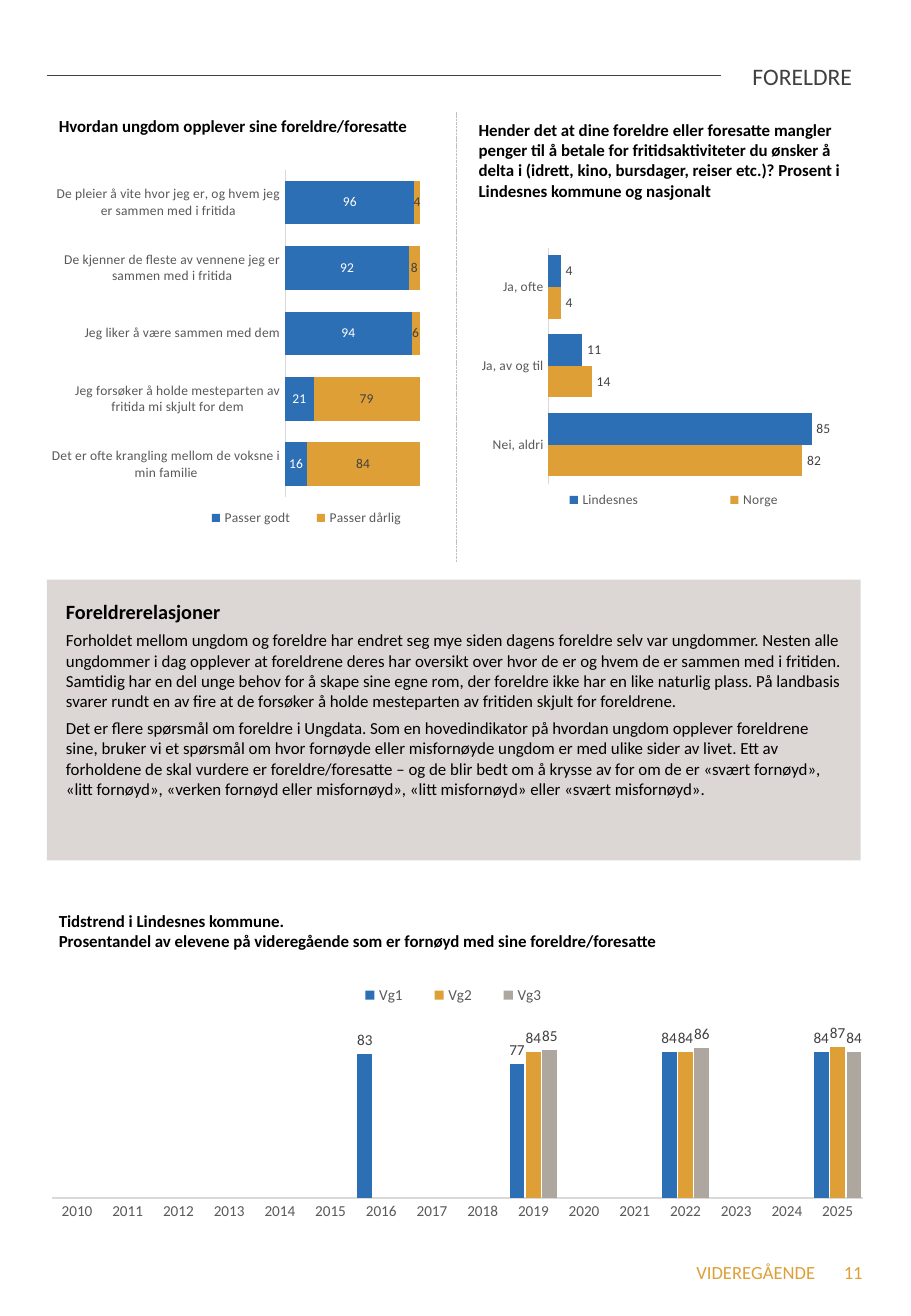
from lxml.etree import SubElement
from pptx import Presentation
from pptx.chart.data import CategoryChartData
from pptx.dml.color import RGBColor
from pptx.enum.chart import XL_CHART_TYPE as KIND, XL_LABEL_POSITION as SPOT
from pptx.enum.chart import XL_LEGEND_POSITION as SIDE, XL_TICK_LABEL_POSITION as TICKS
from pptx.enum.chart import XL_TICK_MARK as MARK
from pptx.enum.dml import MSO_LINE
from pptx.enum.shapes import MSO_CONNECTOR, MSO_SHAPE
from pptx.enum.text import MSO_ANCHOR, PP_ALIGN
from pptx.oxml import parse_xml
from pptx.oxml.ns import nsdecls, qn
from pptx.util import Cm, Pt

FONT = "Calibri"
HUES = {"black": "000000", "dark": "404040", "grey": "595959", "rule": "D9D9D9",
        "dash": "BFBFBF", "white": "FFFFFF", "blue": "2C6FB4", "gold": "DE9F37",
        "stone": "ADA7A0", "panel": "A89D94"}


def hue(name):
    return RGBColor.from_string(HUES[name])


def style(font, size, color, bold=False):
    font.name, font.size, font.bold = FONT, Pt(size), bold
    font.color.rgb = hue(color)


def add_para(frame, text, size, color="black", bold=False, first=False):
    para = frame.paragraphs[0] if first else frame.add_paragraph()
    run = para.add_run()
    run.text = text
    style(run.font, size, color, bold)
    return para


def add_text(slide, place, lines, size, color="black", bold=False):
    frame = slide.shapes.add_textbox(*map(Cm, place)).text_frame
    frame.word_wrap = True
    return [add_para(frame, line, size, color, bold, i == 0)
            for i, line in enumerate(lines)]


def add_line(slide, ends, color, width, dash=None):
    line = slide.shapes.add_connector(MSO_CONNECTOR.STRAIGHT, *map(Cm, ends))
    line.line.color.rgb = hue(color)
    line.line.width = Pt(width)
    if dash:
        line.line.dash_style = dash
    SubElement(line._element.spPr, qn("a:effectLst"))


def add_panel(slide, place, title, paras):
    panel = slide.shapes.add_shape(MSO_SHAPE.RECTANGLE, *map(Cm, place))
    panel.shadow.inherit = False
    panel.fill.solid()
    panel.fill.fore_color.rgb = hue("panel")
    tint = panel._element.spPr.find(".//" + qn("a:srgbClr"))
    SubElement(tint, qn("a:alpha")).set("val", "40000")
    panel.line.fill.background()
    frame = panel.text_frame
    frame.word_wrap = True
    frame.vertical_anchor = MSO_ANCHOR.TOP
    frame.margin_left = frame.margin_right = Cm(0.4)
    frame.margin_top = frame.margin_bottom = Cm(0.4)
    add_para(frame, title, 12, bold=True, first=True)
    for text in paras:
        add_para(frame, text, 10)
    for para in frame.paragraphs:
        para.alignment = PP_ALIGN.LEFT
        para.space_after = Pt(4)


def set_layout(parent, index, box, inner=False):
    """Place a chart part by shares of the chart area."""
    for old in parent.findall(qn("c:layout")):
        parent.remove(old)
    layout = parse_xml(f"<c:layout {nsdecls('c')}><c:manualLayout/></c:layout>")
    pairs = [("layoutTarget", "inner")] if inner else []
    pairs += [("xMode", "edge"), ("yMode", "edge"), *zip("xywh", box)]
    for tag, val in pairs:
        SubElement(layout[0], qn("c:" + tag)).set("val", str(val))
    parent.insert(index, layout)


def add_chart(slide, kind, place, cats, rows, gap, lap, plot_box, key_box,
              size=8, side=SIDE.BOTTOM, flip=False, span=(0, 100)):
    data = CategoryChartData(number_format="0")
    data.categories = cats
    for name, vals, *_ in rows:
        data.add_series(name, vals)
    chart = slide.shapes.add_chart(kind, *map(Cm, place), data).chart
    style(chart.font, size, "black")
    chart.has_title = False

    # Axes
    axis = chart.category_axis
    axis.major_tick_mark = axis.minor_tick_mark = MARK.NONE
    axis.tick_label_position = TICKS.NEXT_TO_AXIS
    axis.has_major_gridlines = False
    axis.reverse_order = flip
    axis.format.line.color.rgb = hue("rule")
    axis.format.line.width = Pt(0.75)
    style(axis.tick_labels.font, size, "grey")
    scale = chart.value_axis
    scale.minimum_scale, scale.maximum_scale = span
    scale.has_major_gridlines = False
    scale.visible = False

    # Bars and labels
    plot = chart.plots[0]
    plot.gap_width, plot.overlap = gap, lap
    plot.vary_by_categories = False
    for bars, (_, _, color, ink) in zip(plot.series, rows):
        bars.format.fill.solid()
        bars.format.fill.fore_color.rgb = hue(color)
        bars.invert_if_negative = False
        tags = bars.data_labels
        tags.show_value = True
        tags.number_format, tags.number_format_is_linked = "0", False
        tags.position = SPOT.CENTER if lap == 100 else SPOT.OUTSIDE_END
        style(tags.font, size, ink)

    # Legend and layout
    chart.has_legend = True
    chart.legend.position = side
    chart.legend.include_in_layout = False
    style(chart.legend.font, size, "grey")
    set_layout(chart.legend._element, 1, key_box)
    set_layout(chart._chartSpace.chart.plotArea, 0, plot_box, True)


def main():
    deck = Presentation()
    deck.slide_width, deck.slide_height = Cm(19.05), Cm(27.51)
    slide = deck.slides.add_slide(deck.slide_layouts[6])

    # Text panel
    add_panel(slide, (0.98, 12.12, 17.02, 5.87), "Foreldrerelasjoner", [
        "Forholdet mellom ungdom og foreldre har endret seg mye siden dagens foreldre selv var "
        "ungdommer. Nesten alle ungdommer i dag opplever at foreldrene deres har oversikt over "
        "hvor de er og hvem de er sammen med i fritiden. Samtidig har en del unge behov for å "
        "skape sine egne rom, der foreldre ikke har en like naturlig plass. På landbasis svarer "
        "rundt en av fire at de forsøker å holde mesteparten av fritiden skjult for foreldrene.",
        "Det er flere spørsmål om foreldre i Ungdata. Som en hovedindikator på hvordan ungdom "
        "opplever foreldrene sine, bruker vi et spørsmål om hvor fornøyde eller misfornøyde "
        "ungdom er med ulike sider av livet. Ett av forholdene de skal vurdere er "
        "foreldre/foresatte – og de blir bedt om å krysse av for om de er «svært fornøyd», «litt "
        "fornøyd», «verken fornøyd eller misfornøyd», «litt misfornøyd» eller «svært misfornøyd»."])

    # Header and chart titles
    head, = add_text(slide, (0.98, 1.16, 17.09, 0.86), ["FORELDRE"], 14, "dark")
    head.alignment = PP_ALIGN.RIGHT
    add_line(slide, (0.98, 1.57, 15.07, 1.57), "dark", 0.3)
    add_text(slide, (0.98, 18.91, 17.02, 1.12), [
        "Tidstrend i Lindesnes kommune.",
        "Prosentandel av elevene på videregående som er fornøyd med sine foreldre/foresatte"],
        10, bold=True)
    add_text(slide, (9.76, 2.37, 8.36, 2.39), [
        "Hender det at dine foreldre eller foresatte mangler penger til å betale for "
        "fritidsaktiviteter du ønsker å delta i (idrett, kino, bursdager, reiser etc.)? "
        "Prosent i Lindesnes kommune og nasjonalt"], 10, bold=True)
    add_text(slide, (0.98, 2.29, 8, 1.12),
             ["Hvordan ungdom opplever sine foreldre/foresatte"], 10, bold=True)

    # Footer with right tabs
    foot, = add_text(slide, (0.85, 26.24, 18.2, 0.74), ["\tVIDEREGÅENDE\t11"], 11, "gold")
    tabs = SubElement(foot._p.get_or_add_pPr(), qn("a:tabLst"))
    for stop in (15.95, 16.94):
        tab = SubElement(tabs, qn("a:tab"))
        tab.set("pos", str(Cm(stop)))
        tab.set("algn", "r")

    # Views of parents
    add_chart(slide, KIND.BAR_STACKED, (0.99, 3.39, 8.03, 7.87), [
        "De pleier å vite hvor jeg er, og hvem jeg er sammen med i fritida",
        "De kjenner de fleste av vennene jeg er sammen med i fritida",
        "Jeg liker å være sammen med dem",
        "Jeg forsøker å holde mesteparten av fritida mi skjult for dem",
        "Det er ofte krangling mellom de voksne i min familie"],
        [("Passer godt", (96, 92, 94, 21, 16), "blue", "white"),
         ("Passer dårlig", (4, 8, 6, 79, 84), "gold", "dark")],
        50, 100, (0.62, 0.02, 0.35, 0.87), (0.37, 0.91, 0.61, 0.07), flip=True)

    # Money for leisure
    add_chart(slide, KIND.BAR_CLUSTERED, (9.91, 5.06, 8.2, 5.89),
              ["Nei, aldri", "Ja, av og til", "Ja, ofte"],
              [("Norge", (82, 14, 4), "gold", "dark"),
               ("Lindesnes", (85, 11, 4), "blue", "dark")],
              50, 0, (0.19, 0.02, 0.79, 0.84), (0.02, 0.87, 0.98, 0.09))
    add_line(slide, (9.55, 2.34, 9.55, 11.76), "dash", 0.5, MSO_LINE.SQUARE_DOT)

    # Trend by school year; -1 marks a year with no survey, below the axis
    years = range(2010, 2026)
    trend = [("Vg1", {2016: 83, 2019: 77, 2022: 84, 2025: 84}, "blue"),
             ("Vg2", {2019: 84, 2022: 84, 2025: 87}, "gold"),
             ("Vg3", {2019: 85, 2022: 86, 2025: 84}, "stone")]
    rows = [(name, [vals.get(year, -1) for year in years], color, "dark")
            for name, vals, color in trend]
    add_chart(slide, KIND.COLUMN_CLUSTERED, (0.91, 20.37, 17.15, 5.44),
              [str(year) for year in years], rows, 20, -10,
              (0.01, 0.19, 0.99, 0.67), (0.36, 0.03, 0.28, 0.1), 9, SIDE.TOP,
              span=(0.1, 100.1))

    deck.save("out.pptx")


if __name__ == "__main__":
    main()
